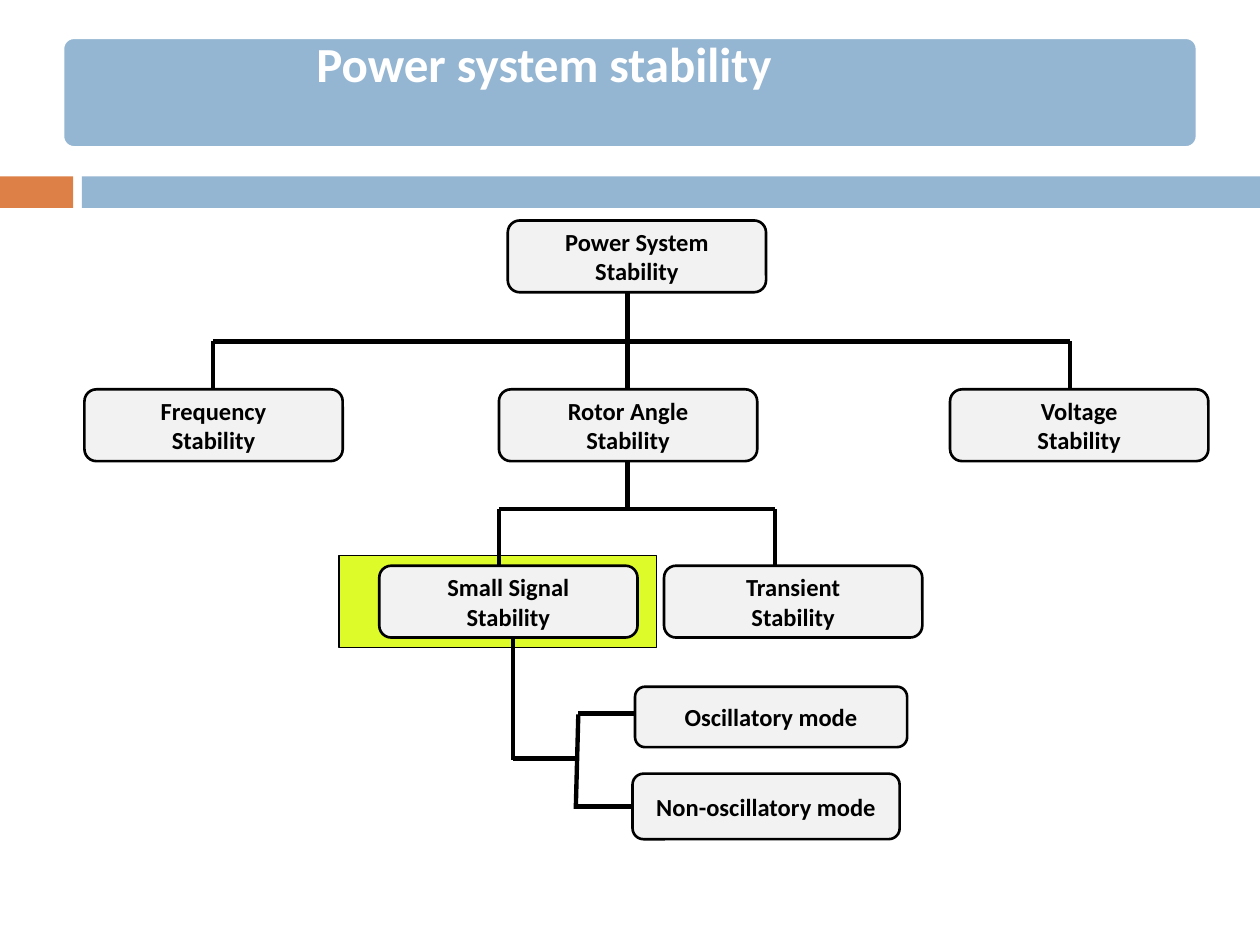
from lxml import etree
from pptx import Presentation
from pptx import util as u
from pptx.dml.color import RGBColor
from pptx.enum import shapes, text
from pptx.oxml.ns import qn

BLUE, ORANGE, YELLOW = "94B6D2", "DD8047", "DDFB29"
GREY, BLACK, WHITE = "F2F2F2", "000000", "FFFFFF"
RECTANGLE = shapes.MSO_SHAPE.RECTANGLE
ROUNDED = shapes.MSO_SHAPE.ROUNDED_RECTANGLE


def colour(value):
    return RGBColor.from_string(value)


class SlideBuilder:
    font_name = "Calibri"
    node_width, node_height = 2.05, 0.57

    def __init__(self, slide):
        self.slide = slide

    def panel(self, left, top, width, height, fill, kind=RECTANGLE, line=None, line_width=1.5):
        shape = self.slide.shapes.add_shape(
            kind, *(u.Inches(value) for value in (left, top, width, height)))
        shape.shadow.inherit = False
        shape.fill.solid()
        shape.fill.fore_color.rgb = colour(fill)
        if line:
            shape.line.color.rgb = colour(line)
            shape.line.width = u.Pt(line_width)
        else:
            shape.line.fill.background()
        return shape

    def style(self, paragraph, size, font_colour):
        paragraph.font.name = self.font_name
        paragraph.font.size = u.Pt(size)
        paragraph.font.bold = True
        paragraph.font.color.rgb = colour(font_colour)

    def title(self, left, top, width, height, words):
        box = self.slide.shapes.add_textbox(
            *(u.Inches(value) for value in (left, top, width, height)))
        frame = box.text_frame
        frame.word_wrap = True
        frame.vertical_anchor = text.MSO_ANCHOR.TOP
        frame.margin_left = frame.margin_right = u.Inches(0.12)
        frame.margin_top = u.Inches(0.02)
        paragraph = frame.paragraphs[0]
        paragraph.text = words
        paragraph.line_spacing = 0.9
        self.style(paragraph, 28, WHITE)

    def node(self, left, top, lines, width=node_width, height=node_height):
        shape = self.panel(left, top, width, height, GREY, ROUNDED, BLACK)
        frame = shape.text_frame
        frame.word_wrap = True
        frame.vertical_anchor = text.MSO_ANCHOR.MIDDLE
        frame.text = "\n".join(lines)
        for paragraph in frame.paragraphs:
            paragraph.alignment = text.PP_ALIGN.CENTER
            self.style(paragraph, 14, BLACK)

    def line(self, x1, y1, x2, y2, width=2.5):
        connector = self.slide.shapes.add_connector(
            shapes.MSO_CONNECTOR.STRAIGHT, *(u.Inches(value) for value in (x1, y1, x2, y2)))
        connector.line.color.rgb = colour(BLACK)
        connector.line.width = u.Pt(width)
        etree.SubElement(connector._element.spPr, qn("a:effectLst"))

    def branch(self, trunk, top, bar, bottom, drops):
        """Draw a trunk down to a bar, and a drop from the bar to each child."""
        self.line(min(drops), bar, max(drops), bar)
        self.line(trunk, top, trunk, bar)
        for x in drops:
            self.line(x, bar, x, bottom)


def main():
    presentation = Presentation()
    presentation.slide_width, presentation.slide_height = u.Inches(10), u.Inches(7.5)
    builder = SlideBuilder(presentation.slides.add_slide(presentation.slide_layouts[6]))

    # Header bands and title
    builder.panel(0, 1.4, 0.58, 0.25, ORANGE)
    builder.panel(0.65, 1.4, 9.35, 0.25, BLUE)
    banner = builder.panel(0.5, 0.3, 9, 0.87, BLUE, ROUNDED, WHITE)
    banner.adjustments[0] = 0.1
    builder.title(2.39, 0.3, 7.11, 0.87, "Power system stability")

    # Highlight behind small signal stability
    builder.panel(2.69, 4.41, 2.52, 0.73, YELLOW, line=BLACK, line_width=0.75)

    # Stability classes
    for left, top, name in (
        (4.03, 1.75, "Power System"),
        (0.67, 3.09, "Frequency"),
        (7.54, 3.09, "Voltage"),
        (3.96, 3.09, "Rotor Angle"),
        (3.01, 4.49, "Small Signal"),
        (5.27, 4.49, "Transient"),
    ):
        builder.node(left, top, (name, "Stability"))

    # Tree lines between the classes
    builder.branch(4.98, 2.32, 2.71, 3.09, (1.69, 4.98, 8.49))
    builder.branch(4.98, 3.66, 4.04, 4.49, (3.96, 6.15))

    # Bracket to the modes
    builder.line(4.07, 5.05, 4.07, 6.03)
    builder.line(4.59, 5.67, 4.57, 6.42)
    for x1, x2, y in ((4.07, 4.58, 6.02), (4.59, 5.05, 5.66), (4.56, 5.01, 6.4)):
        builder.line(x1, y, x2, y, width=3)

    # Modes
    builder.node(5.02, 6.14, ("Non-oscillatory mode",), 2.12, 0.52)
    builder.node(5.04, 5.45, ("Oscillatory mode",), 2.16, 0.48)

    presentation.save("out.pptx")


if __name__ == "__main__":
    main()
